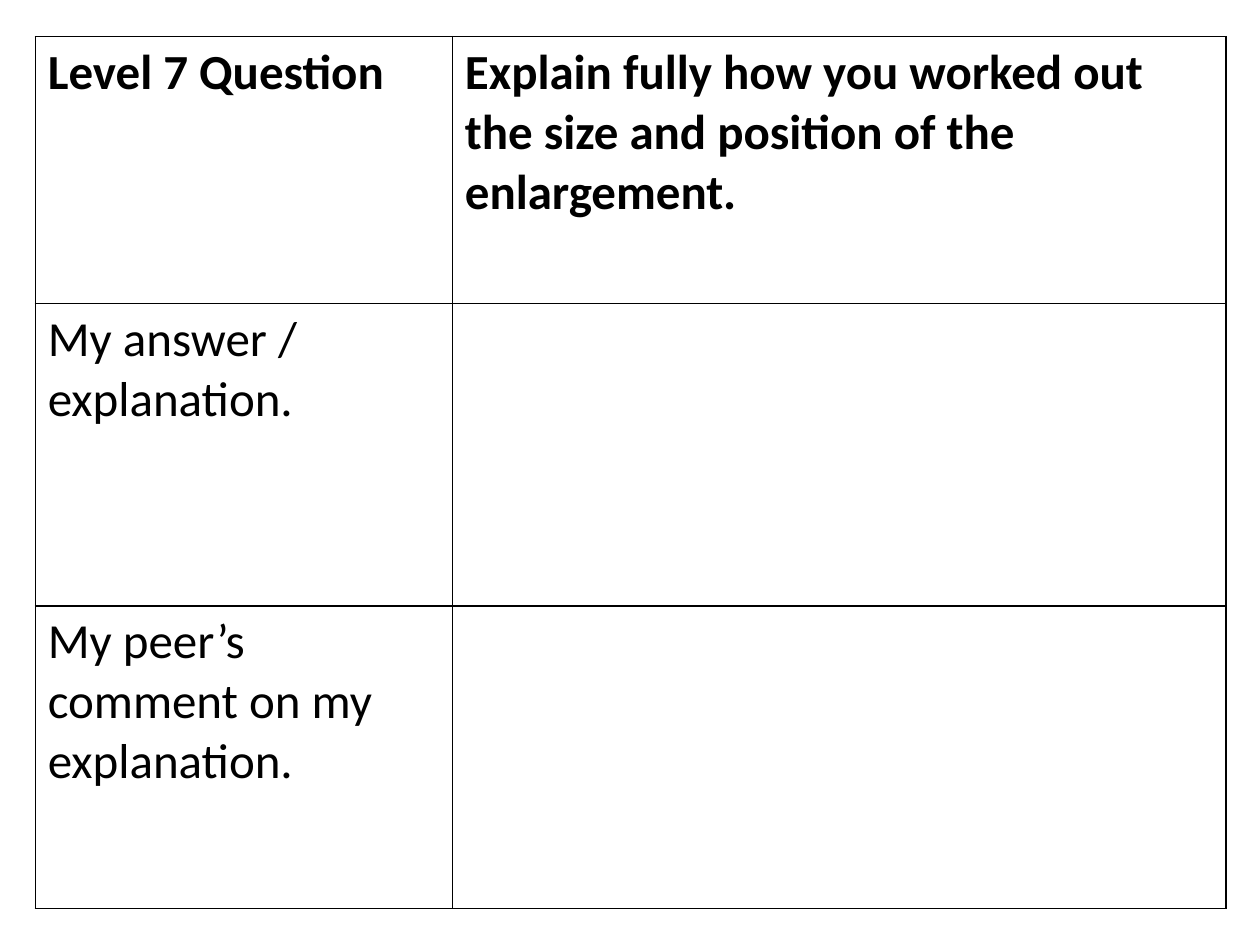
"""Build a peer-assessment worksheet slide for a Level 7 enlargement question."""
from dataclasses import dataclass

import lxml.etree
import pptx
import pptx.dml.color
import pptx.oxml.ns
import pptx.table
import pptx.util

COLOURS = {"ink": "000000", "paper": "FFFFFF"}
FONT = "Calibri"
TEXT_SIZE = pptx.util.Pt(28)
BORDER_WIDTH = pptx.util.Pt(1)
COLUMN_WIDTHS = (3.31, 6.14)


@dataclass(frozen=True)
class WorksheetRow:
    prompt: str
    response: str
    height: float
    bold: bool = False


WORKSHEET = (
    WorksheetRow(
        "Level 7 Question",
        "Explain fully how you worked out the size and position of the enlargement.",
        2.12,
        bold=True,
    ),
    WorksheetRow("My answer / explanation.", "", 2.4),
    WorksheetRow("My peer’s comment on my explanation.", "", 2.4),
)


def add_borders(cell: pptx.table._Cell) -> None:
    """Outline all four sides of a cell."""
    qn = pptx.oxml.ns.qn
    properties = cell._tc.get_or_add_tcPr()
    for position, side in enumerate(("a:lnL", "a:lnR", "a:lnT", "a:lnB")):
        border = lxml.etree.Element(qn(side), w=str(BORDER_WIDTH))
        fill = lxml.etree.SubElement(border, qn("a:solidFill"))
        lxml.etree.SubElement(fill, qn("a:srgbClr"), val=COLOURS["ink"])
        properties.insert(position, border)


def fill_cell(cell: pptx.table._Cell, text: str, bold: bool) -> None:
    """Write and style one worksheet cell."""
    cell.text = text
    font = cell.text_frame.paragraphs[0].font
    font.name = FONT
    font.size = TEXT_SIZE
    font.bold = bold
    font.color.rgb = pptx.dml.color.RGBColor.from_string(COLOURS["ink"])
    cell.fill.solid()
    cell.fill.fore_color.rgb = pptx.dml.color.RGBColor.from_string(COLOURS["paper"])
    add_borders(cell)


def main() -> None:
    """Create the slide and save it."""
    inches = pptx.util.Inches
    presentation = pptx.Presentation()
    presentation.slide_width = inches(10)
    presentation.slide_height = inches(7.5)
    slide = presentation.slides.add_slide(presentation.slide_layouts[6])
    worksheet = slide.shapes.add_table(
        len(WORKSHEET),
        len(COLUMN_WIDTHS),
        inches(0.28),
        inches(0.29),
        inches(sum(COLUMN_WIDTHS)),
        inches(sum(row.height for row in WORKSHEET)),
    ).table
    worksheet.horz_banding = False
    worksheet.first_row = False
    for column, width in zip(worksheet.columns, COLUMN_WIDTHS):
        column.width = inches(width)
    for table_row, content in zip(worksheet.rows, WORKSHEET):
        table_row.height = inches(content.height)
        for cell, text in zip(table_row.cells, (content.prompt, content.response)):
            fill_cell(cell, text, content.bold)
    presentation.save("out.pptx")


if __name__ == "__main__":
    main()
